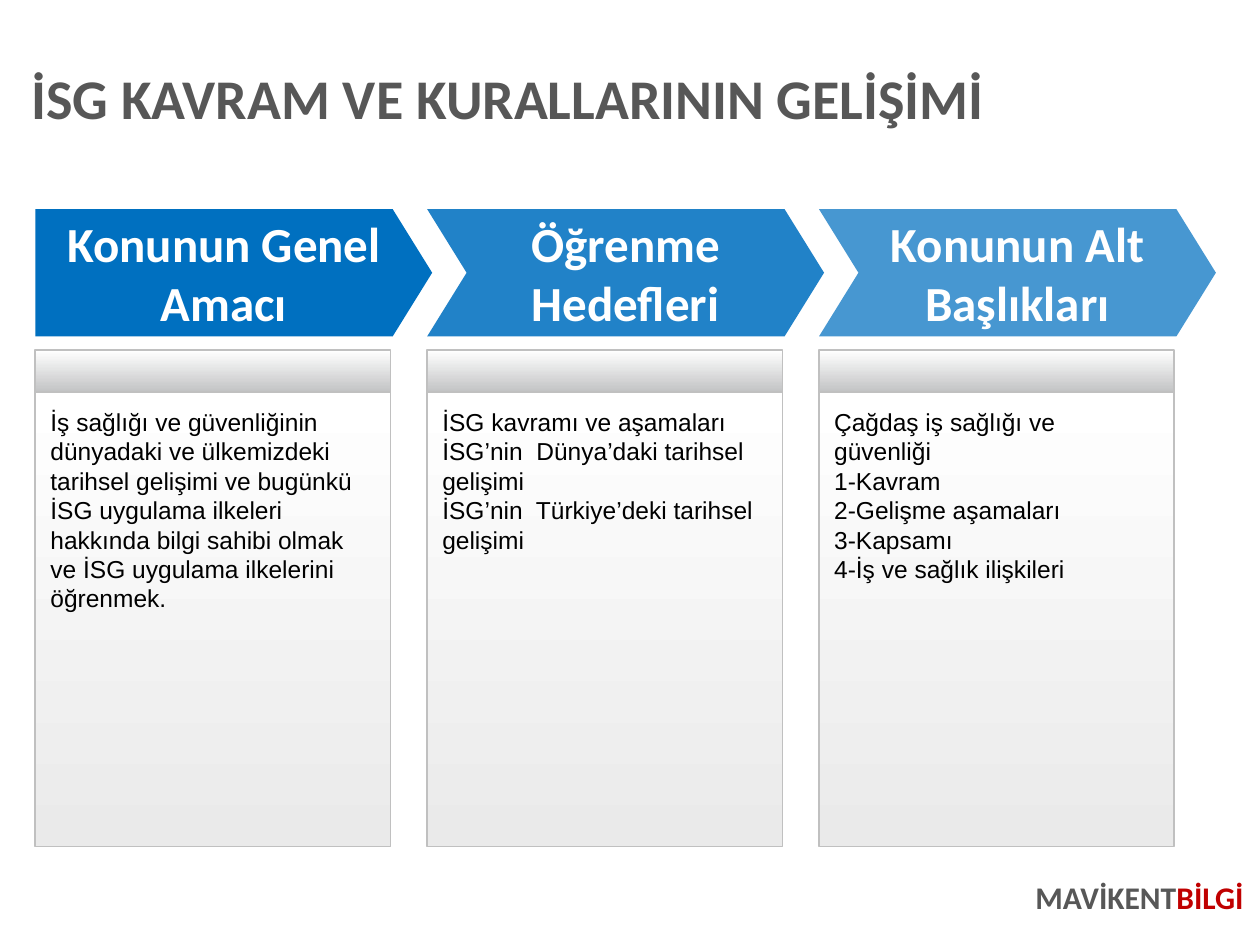
"""Build the topic overview slide with three arrow headings and text panels."""
from dataclasses import dataclass

from lxml import etree
from pptx import Presentation
from pptx.dml.color import RGBColor
from pptx.enum.shapes import MSO_SHAPE
from pptx.enum.text import MSO_ANCHOR, PP_ALIGN
from pptx.oxml.ns import qn
from pptx.util import Inches, Pt

RECT = MSO_SHAPE.RECTANGLE
PENTAGON = MSO_SHAPE.PENTAGON
CHEVRON = MSO_SHAPE.CHEVRON
TOP, MIDDLE = MSO_ANCHOR.TOP, MSO_ANCHOR.MIDDLE
LEFT, CENTER, RIGHT = PP_ALIGN.LEFT, PP_ALIGN.CENTER, PP_ALIGN.RIGHT


@dataclass(frozen=True)
class Theme:
    """Colours, fonts and type sizes."""
    heading_font: str = "Calibri"
    body_font: str = "Arial"
    title_size: int = 32
    arrow_size: int = 28
    brand_size: int = 18
    body_size: int = 14
    grey: str = "575757"
    red: str = "C00000"
    blue: str = "0070C0"
    white: str = "FFFFFF"
    black: str = "000000"
    border: str = "C0C0C0"
    bar_end: str = "C1C2C3"
    panel_end: str = "EAEAEA"


class SlideBuilder:
    """Draws styled elements on one slide."""

    def __init__(self, slide, theme):
        self.slide = slide
        self.theme = theme

    def fill_text(self, shape, paragraphs, font, size, color, bold=False,
                  align=LEFT, anchor=TOP, insets=(0.1, 0.05, 0.1, 0.05)):
        """Fill a shape with paragraphs, each a list of (text, colour) runs."""
        tf = shape.text_frame
        tf.word_wrap = True
        tf.vertical_anchor = anchor
        tf.margin_left, tf.margin_top, tf.margin_right, tf.margin_bottom = map(Inches, insets)
        for i, runs in enumerate(paragraphs):
            p = tf.add_paragraph() if i else tf.paragraphs[0]
            p.alignment = align
            p.font.name, p.font.size, p.font.bold = font, Pt(size), bold
            for text, run_color in runs:
                r = p.add_run()
                r.text = text
                r.font.color.rgb = RGBColor.from_string(run_color or color)
        return tf

    def text(self, box, runs, size, **style):
        """Add a bold heading text box."""
        shape = self.slide.shapes.add_textbox(*map(Inches, box))
        return self.fill_text(shape, [runs], self.theme.heading_font, size,
                              self.theme.grey, bold=True, **style)

    def arrow(self, kind, box, text, point, opacity):
        """Add a heading arrow with the given point depth and opacity."""
        t = self.theme
        shape = self.slide.shapes.add_shape(kind, *map(Inches, box))
        shape.shadow.inherit = False
        shape.adjustments[0] = point
        shape.fill.solid()
        shape.fill.fore_color.rgb = RGBColor.from_string(t.blue)
        shape.line.fill.background()
        if opacity < 100:
            color = shape._element.spPr.find(qn("a:solidFill"))[0]
            etree.SubElement(color, qn("a:alpha")).set("val", str(opacity * 1000))
        self.fill_text(shape, [[(text, None)]], t.heading_font, t.arrow_size, t.white,
                       bold=True, align=CENTER, anchor=MIDDLE)

    def gradient_box(self, shapes, box, end_color):
        """Add a bordered rectangle fading downwards from white."""
        shape = shapes.add_shape(RECT, *map(Inches, box))
        shape.shadow.inherit = False
        shape.fill.gradient()
        shape.fill.gradient_angle = 270
        stops = zip(shape.fill.gradient_stops, (0, 1), (self.theme.white, end_color))
        for stop, position, color in stops:
            stop.position = position
            stop.color.rgb = RGBColor.from_string(color)
        shape.line.color.rgb = RGBColor.from_string(self.theme.border)
        shape.line.width = Pt(1)
        return shape

    def panel(self, left, lines):
        """Add a grouped header bar and text panel."""
        t = self.theme
        shapes = self.slide.shapes.add_group_shape().shapes
        self.gradient_box(shapes, (left, 2.78, 2.82, 0.34), t.bar_end)
        body = self.gradient_box(shapes, (left, 3.11, 2.82, 3.61), t.panel_end)
        self.fill_text(body, [[(line, None)] for line in lines], t.body_font,
                       t.body_size, t.black, insets=(0.12, 0.12, 0.16, 0.08))


COLUMNS = [
    (PENTAGON, "Konunun Genel Amacı", 100, [
        "İş sağlığı ve güvenliğinin dünyadaki ve ülkemizdeki tarihsel gelişimi ve "
        "bugünkü İSG uygulama ilkeleri hakkında bilgi sahibi olmak ve İSG uygulama "
        "ilkelerini öğrenmek."]),
    (CHEVRON, "Öğrenme Hedefleri", 87, [
        "İSG kavramı ve aşamaları",
        "İSG’nin  Dünya’daki tarihsel gelişimi",
        "İSG’nin  Türkiye’deki tarihsel gelişimi"]),
    (CHEVRON, "Konunun Alt Başlıkları", 72, [
        "Çağdaş iş sağlığı ve güvenliği",
        "1-Kavram",
        "2-Gelişme aşamaları",
        "3-Kapsamı",
        "4-İş ve sağlık ilişkileri"]),
]


def main():
    theme = Theme()
    prs = Presentation()
    prs.slide_width, prs.slide_height = Inches(10), Inches(7.5)
    s = SlideBuilder(prs.slides.add_slide(prs.slide_layouts[6]), theme)

    tf = s.text((0.25, 0.45, 9.64, 0.71), [("İSG KAVRAM VE KURALLARININ GELİŞİMİ", None)],
                theme.title_size, anchor=MIDDLE, insets=(0, 0.05, 0, 0.05))
    tf.paragraphs[0].line_spacing = 0.9

    for i, (kind, heading, opacity, lines) in enumerate(COLUMNS):
        left = 0.28 + i * 3.11
        s.arrow(kind, (left, 1.66, 3.15, 1.01), heading, 0.31, opacity)
        s.panel(left, lines)

    s.text((7.56, 6.97, 2.31, 0.5), [("MAVİKENT", None), ("BİLGİ", theme.red)],
           theme.brand_size, align=RIGHT, insets=(0, 0, 0, 0))
    prs.save("out.pptx")


if __name__ == "__main__":
    main()
